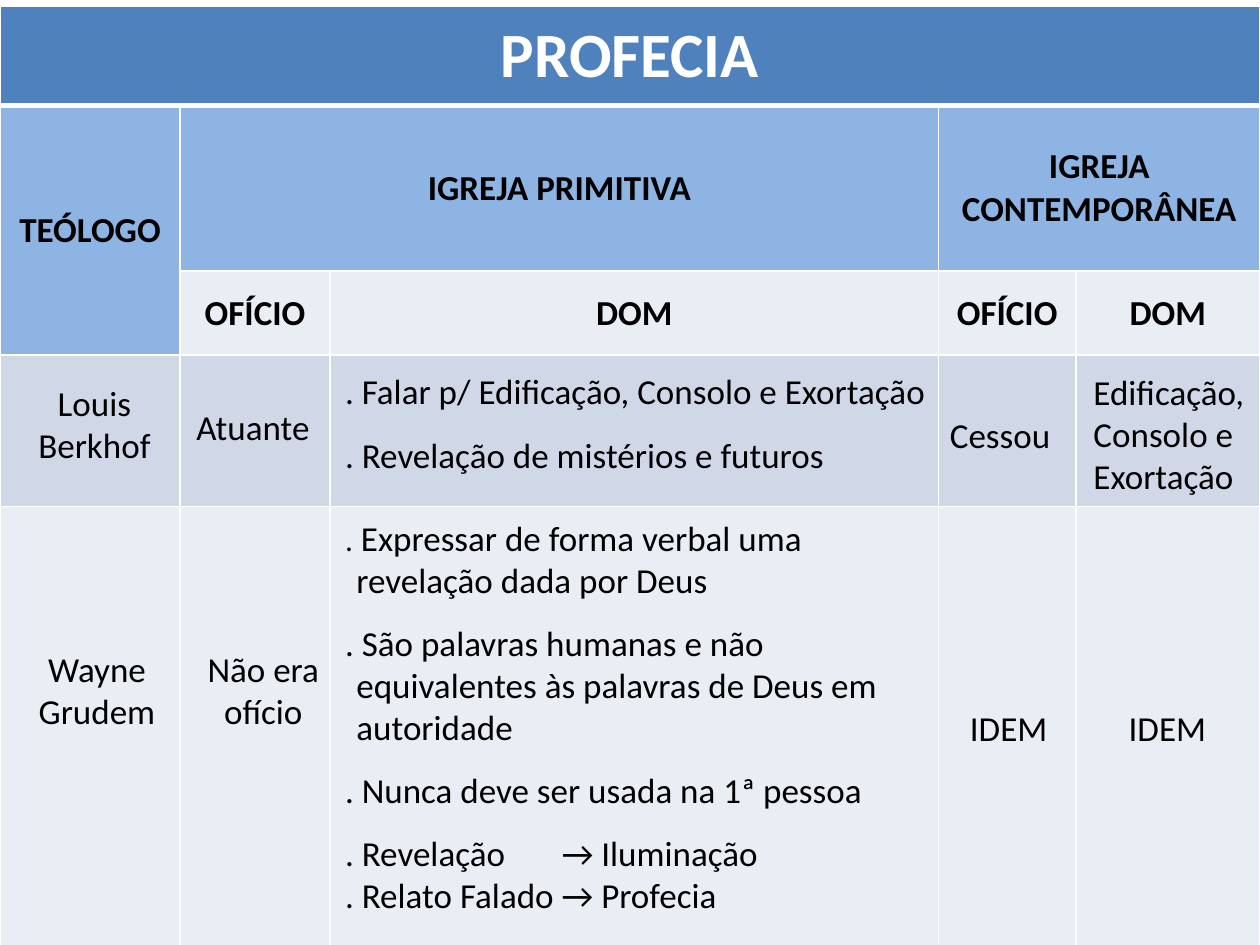
from pptx import Presentation
from pptx.dml.color import RGBColor
from pptx.enum.text import MSO_ANCHOR, PP_ALIGN
from pptx.oxml.ns import qn
from pptx.util import Inches, Pt
from lxml.etree import SubElement

LEFT, MID = PP_ALIGN.LEFT, PP_ALIGN.CENTER
BLACK, WHITE, BLUE, SKY = "000000", "FFFFFF", "4F81BD", "8EB4E3"
PALE, MIST = "E9EDF4", "D0D8E8"

COLS = [1.43, 1.19, 4.83, 1.09, 1.46]
ROWS = [0.79, 1.31, 0.67, 1.2, 3.49]
FILLS = [BLUE, SKY, PALE, MIST, PALE]
MERGES = [((0, 0), (0, 4)), ((1, 0), (2, 0)), ((1, 1), (1, 2)), ((1, 3), (1, 4))]
HEADS = {
    (0, 0): "PROFECIA",
    (1, 0): "TEÓLOGO", (1, 1): "IGREJA PRIMITIVA", (1, 3): "IGREJA CONTEMPORÂNEA",
    (2, 1): "OFÍCIO", (2, 2): "DOM", (2, 3): "OFÍCIO", (2, 4): "DOM",
}

# Paragraph: space before in points, hanging indent, then runs of (text, size)
BERKHOF_GIFT = [
    (0, 0, (". Falar p/ Edificação, Consolo e Exortação", 20)),
    (13, 0, (". Revelação de mistérios e futuros", 20)),
]
GRUDEM_GIFT = [
    (0, 0.09, (".", 18), (" Expressar de forma verbal uma revelação dada por Deus", 20)),
    (12, 0.09, (". São palavras humanas e não equivalentes às palavras de Deus em "
                "autoridade", 20)),
    (12, 0.09, (". Nunca deve ser usada na 1ª pessoa", 20)),
    (12, 0, (". Revelação\t→ Iluminação", 20)),
    (0, 0, (". Relato Falado → Profecia", 20)),
]
ARROW_TAB = 1.72

# Left, top, width, height, alignment, text
NOTES = [
    (0.2, 2.98, 1.1, 0.77, MID, "Louis Berkhof"),
    (1.46, 3.17, 1.1, 0.74, LEFT, "Atuante"),
    (2.64, 2.88, 4.83, 1.26, LEFT, BERKHOF_GIFT),
    (7.44, 3.23, 1.02, 0.44, LEFT, "Cessou"),
    (8.58, 2.89, 1.42, 1.41, LEFT, "Edificação, Consolo e Exortação"),
    (0.08, 5.09, 1.38, 1.08, MID, "Wayne Grudem"),
    (1.54, 5.09, 1.1, 1.08, MID, "Não era ofício"),
    (2.64, 4.05, 4.72, 3.4, LEFT, GRUDEM_GIFT),
    (7.6, 5.56, 0.94, 0.74, LEFT, "IDEM"),
    (8.86, 5.56, 0.94, 0.74, LEFT, "IDEM"),
]


def rgb(code):
    return RGBColor.from_string(code)


def write(para, text, size, color=BLACK, bold=False):
    run = para.add_run()
    run.text = text
    style = {"name": "Calibri", "size": Pt(size), "bold": bold}
    for key, value in style.items():
        setattr(run.font, key, value)
    run.font.color.rgb = rgb(color)


def edge(cell, side, width):
    """Draw one white border; call before the fill is set."""
    line = SubElement(cell._tc.get_or_add_tcPr(), qn("a:ln" + side), w=str(Pt(width)))
    fill = SubElement(line, qn("a:solidFill"))
    SubElement(fill, qn("a:srgbClr"), val=WHITE)


def add_grid(slide):
    frame = slide.shapes.add_table(len(ROWS), len(COLS), Inches(0), Inches(0.05),
                                   Inches(sum(COLS)), Inches(sum(ROWS)))
    table = frame.table
    for col, width in zip(table.columns, COLS):
        col.width = Inches(width)
    for row, height in zip(table.rows, ROWS):
        row.height = Inches(height)
    for start, end in MERGES:
        table.cell(*start).merge(table.cell(*end))
    for r, color in enumerate(FILLS):
        for c in range(len(COLS)):
            cell = table.cell(r, c)
            for side in "LRTB":
                thick = (r, side) in [(0, "B"), (1, "T")]
                edge(cell, side, 3 if thick else 1)
            cell.fill.solid()
            cell.fill.fore_color.rgb = rgb(color)
            cell.vertical_anchor = MSO_ANCHOR.MIDDLE
    for (r, c), text in HEADS.items():
        para = table.cell(r, c).text_frame.paragraphs[0]
        para.alignment = MID
        write(para, text, 20 if r else 36, BLACK if r else WHITE, True)


def add_note(slide, x, y, w, h, align, text):
    frame = slide.shapes.add_textbox(*map(Inches, (x, y, w, h))).text_frame
    frame.word_wrap = True
    items = [(0, 0, (text, 20))] if isinstance(text, str) else text
    for i, (gap, hang, *runs) in enumerate(items):
        para = frame.add_paragraph() if i else frame.paragraphs[0]
        para.alignment = align
        if gap:
            para.space_before = Pt(gap)
        props = para._p.get_or_add_pPr()
        if hang:
            props.set("marL", str(Inches(hang)))
            props.set("indent", str(-Inches(hang)))
        if any("\t" in words for words, _ in runs):
            tabs = SubElement(props, qn("a:tabLst"))
            SubElement(tabs, qn("a:tab"), pos=str(Inches(ARROW_TAB)), algn="l")
        for words, size in runs:
            write(para, words, size)


def main():
    deck = Presentation()
    deck.slide_width, deck.slide_height = Inches(10), Inches(7.5)
    slide = deck.slides.add_slide(deck.slide_layouts[6])
    add_grid(slide)
    for note in NOTES:
        add_note(slide, *note)
    deck.save("out.pptx")


if __name__ == "__main__":
    main()
